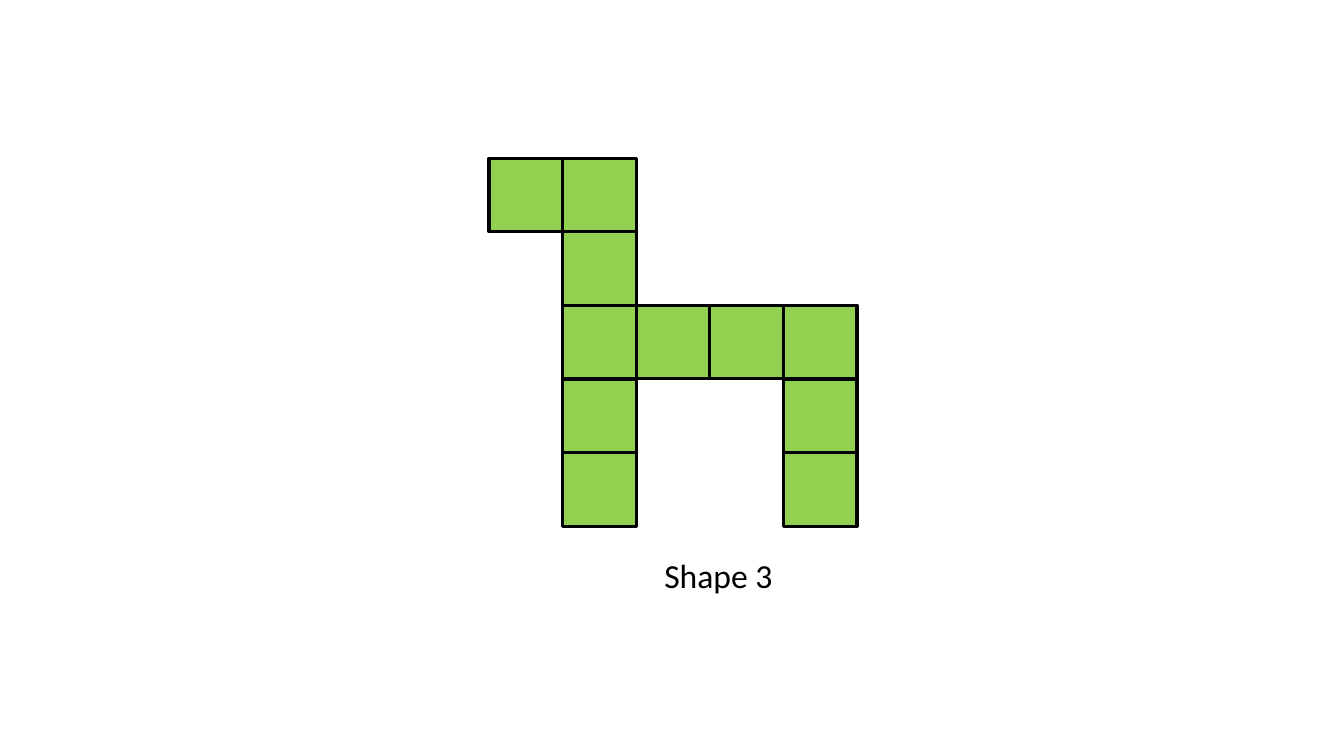
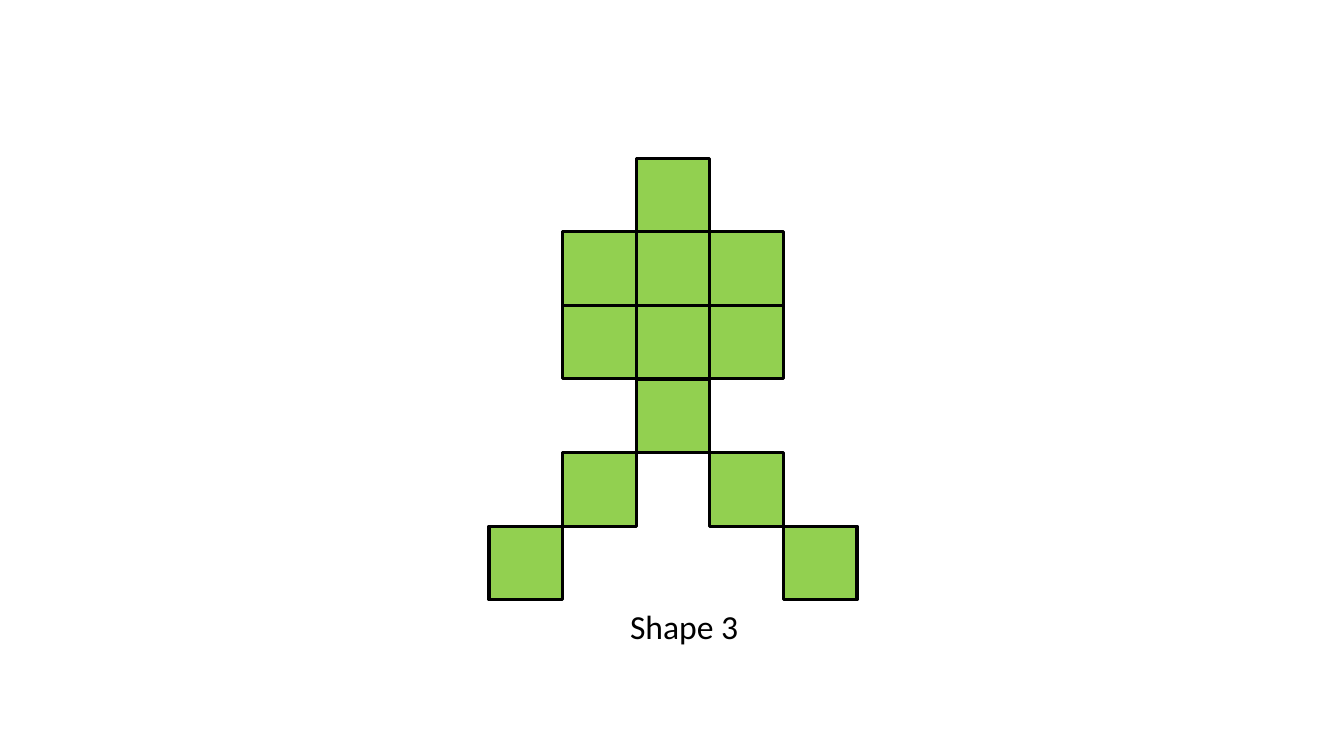
from dataclasses import dataclass

from pptx import Presentation
from pptx.dml.color import RGBColor
from pptx.enum.shapes import MSO_SHAPE as Shape
from pptx.enum.text import PP_ALIGN as Align
from pptx.slide import Slide
from pptx.util import Emu, Pt

SCALE = 9144  # EMU per px, 100 px to the inch
CELL = 73
LEFT, TOP = 485, 157
GREEN, BLACK = "92D050", "000000"
FONT = "Calibri"


@dataclass(frozen=True)
class Figure:
    rows: tuple[str, ...]
    label: str
    x: int
    y: int


FIGURES = (
    Figure(("##...",
            ".#...",
            ".####",
            ".#..#",
            ".#..#"), "Shape 3", 548, 546),
    Figure(("..#..",
            ".###.",
            ".###.",
            "..#..",
            ".#.#.",
            "#...#"), "Shape 3", 514, 596),
)


def px(n: int) -> Emu:
    return Emu(n * SCALE)


def color(code: str) -> RGBColor:
    return RGBColor.from_string(code)


def add_tile(slide: Slide, col: int, row: int) -> None:
    tile = slide.shapes.add_shape(
        Shape.RECTANGLE, px(LEFT + col * CELL), px(TOP + row * CELL),
        px(CELL), px(CELL))
    tile.shadow.inherit = False
    tile.fill.solid()
    tile.fill.fore_color.rgb = color(GREEN)
    tile.line.color.rgb = color(BLACK)
    tile.line.width = Pt(2.25)


def add_label(slide: Slide, text: str, x: int, y: int) -> None:
    frame = slide.shapes.add_textbox(px(x), px(y), px(329), px(92)).text_frame
    frame.word_wrap = True
    frame.text = text
    para = frame.paragraphs[0]
    para.alignment = Align.CENTER
    font = para.runs[0].font
    font.name, font.size = FONT, Pt(24)
    font.color.rgb = color(BLACK)


def draw(slide: Slide, figure: Figure) -> None:
    """Draw one tile for each # in the figure's rows, then its label."""
    for row, line in enumerate(figure.rows):
        for col, mark in enumerate(line):
            if mark == "#":
                add_tile(slide, col, row)
    add_label(slide, figure.label, figure.x, figure.y)


def main() -> None:
    deck = Presentation()
    deck.slide_width, deck.slide_height = px(1333), px(750)
    blank = deck.slide_layouts.get_by_name("Blank")
    for figure in FIGURES:
        draw(deck.slides.add_slide(blank), figure)
    deck.save("out.pptx")


if __name__ == "__main__":
    main()
